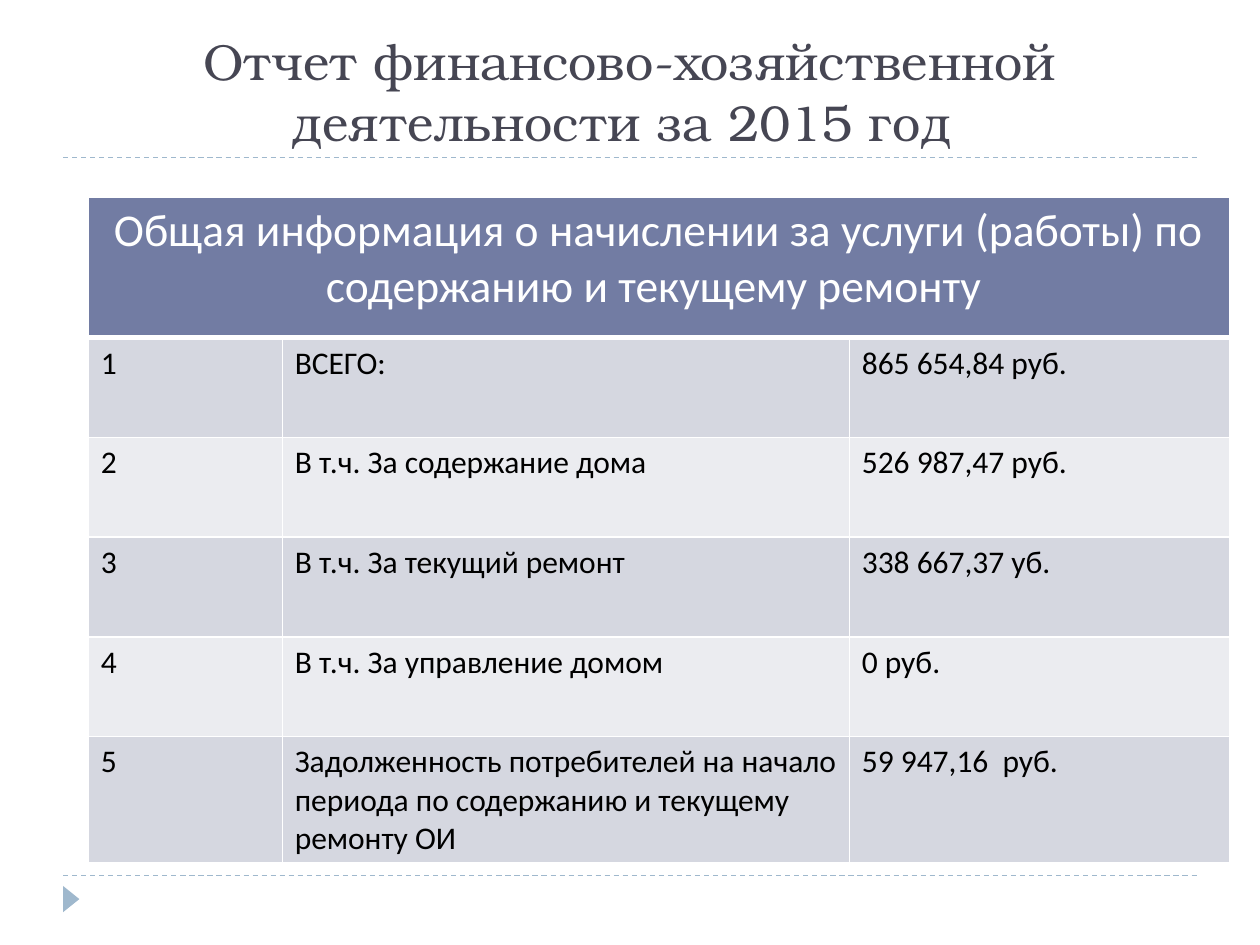
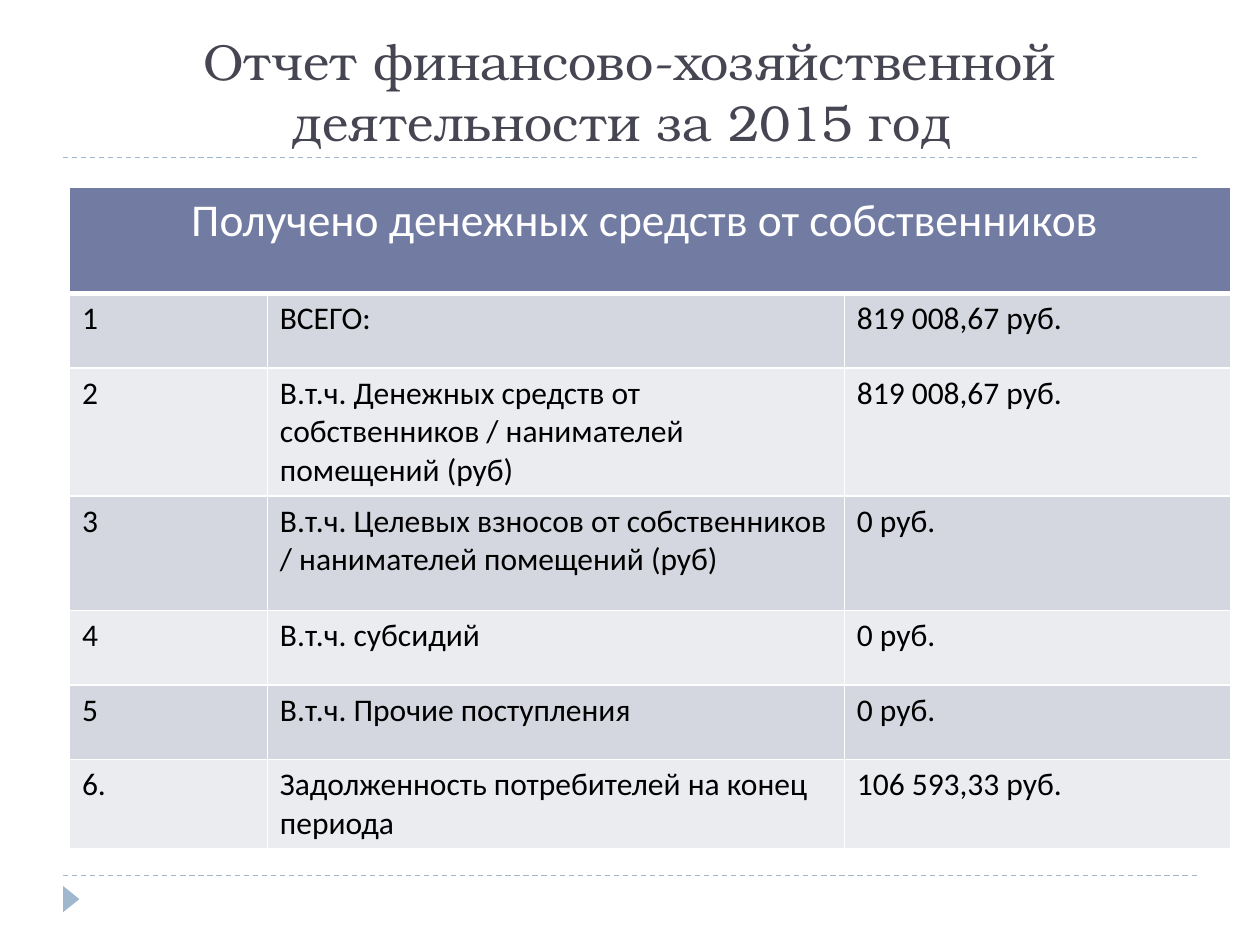
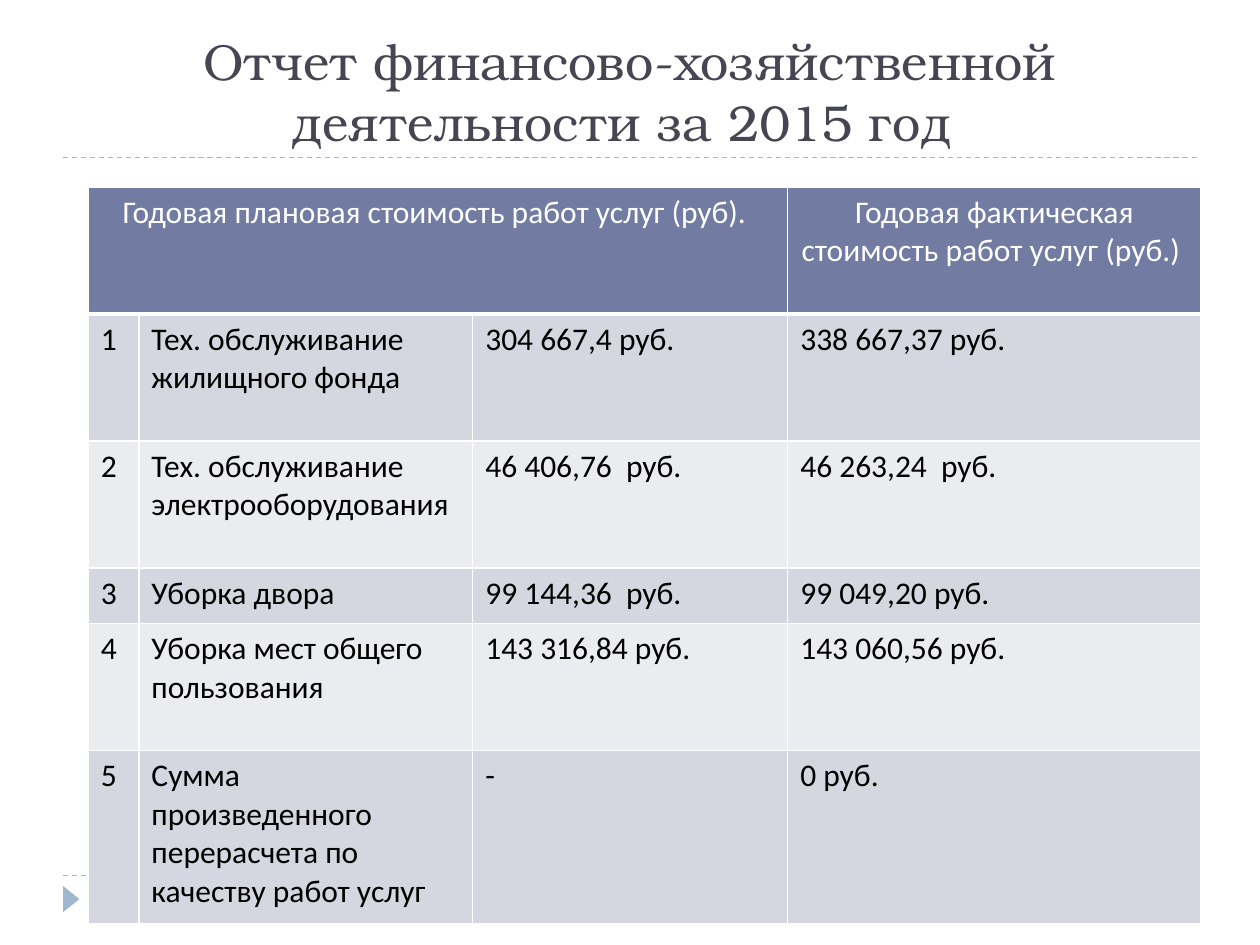
from lxml import etree
from pptx import Presentation
from pptx import util as u
from pptx.dml.color import RGBColor
from pptx.enum import dml, shapes, text
from pptx.oxml import ns

SLATE = RGBColor(0x46, 0x46, 0x53)
SKY = RGBColor(0x9F, 0xB8, 0xCD)
INDIGO = RGBColor(0x72, 0x7C, 0xA3)
BAND_DARK = RGBColor(0xD5, 0xD7, 0xE0)
BAND_LIGHT = RGBColor(0xEB, 0xEC, 0xF0)
WHITE = RGBColor(0xFF, 0xFF, 0xFF)
BLACK = RGBColor(0x00, 0x00, 0x00)

TITLE_FONT = "TeX Gyre Bonum"
TABLE_FONT = "Calibri"
TITLE = "Отчет финансово-хозяйственной деятельности за 2015 год "


class Report:
    def __init__(self):
        self.presentation = Presentation()
        self.presentation.slide_width = u.Cm(25.4)
        self.presentation.slide_height = u.Cm(19.05)
        self.slide = None

    def add_slide(self):
        layout = self.presentation.slide_layouts[6]
        self.slide = self.presentation.slides.add_slide(layout)
        self.add_rule(17.65)
        self.add_rule(3.18)
        self.add_marker()
        self.add_title(TITLE)

    def add_rule(self, top):
        connector = self.slide.shapes.add_connector(
            shapes.MSO_CONNECTOR.STRAIGHT,
            u.Cm(1.27), u.Cm(top), u.Cm(24.13), u.Cm(top))
        connector.line.color.rgb = SKY
        connector.line.width = u.Pt(0.75)
        connector.line.dash_style = dml.MSO_LINE.DASH
        etree.SubElement(connector._element.spPr, ns.qn("a:effectLst"))

    def add_marker(self):
        shape = self.slide.shapes.add_shape(
            shapes.MSO_SHAPE.ISOSCELES_TRIANGLE,
            u.Cm(1.17), u.Cm(17.96), u.Cm(0.53), u.Cm(0.33))
        shape.rotation = 90
        shape.shadow.inherit = False
        shape.fill.solid()
        shape.fill.fore_color.rgb = SKY
        shape.line.fill.background()

    def add_title(self, words):
        shape = self.slide.shapes.add_textbox(
            u.Cm(1.27), u.Cm(0.64), u.Cm(22.86), u.Cm(2.54))
        frame = shape.text_frame
        frame.word_wrap = True
        frame.vertical_anchor = text.MSO_ANCHOR.BOTTOM
        paragraph = frame.paragraphs[0]
        paragraph.alignment = text.PP_ALIGN.CENTER
        self.add_run(paragraph, words, TITLE_FONT, 28.8, SLATE)

    def add_run(self, paragraph, words, font, size, color):
        run = paragraph.add_run()
        run.text = words
        run.font.name = font
        run.font.size = u.Pt(size)
        run.font.color.rgb = color

    def add_table(self, left, top, widths, heights, headers, header_size, rows):
        table = self.slide.shapes.add_table(
            len(heights), len(widths), u.Cm(left), u.Cm(top),
            u.Cm(sum(widths)), u.Cm(sum(heights))).table
        table.first_row = False
        table.horz_banding = False
        for column, width in zip(table.columns, widths):
            column.width = u.Cm(width)
        for row, height in zip(table.rows, heights):
            row.height = u.Cm(height)

        for cell in table.rows[0].cells:
            self.style_cell(cell, INDIGO, bottom=3)
        start = 0
        for words, span in headers:
            cell = table.cell(0, start)
            if span > 1:
                cell.merge(table.cell(0, start + span - 1))
            paragraph = cell.text_frame.paragraphs[0]
            paragraph.alignment = text.PP_ALIGN.CENTER
            self.add_run(paragraph, words, TABLE_FONT, header_size, WHITE)
            start += span

        for number, values in enumerate(rows, 1):
            band = BAND_DARK if number % 2 else BAND_LIGHT
            for cell, words in zip(table.rows[number].cells, values):
                self.style_cell(cell, band)
                paragraph = cell.text_frame.paragraphs[0]
                self.add_run(paragraph, words, TABLE_FONT, 18, BLACK)

    def style_cell(self, cell, color, bottom=1):
        properties = cell._tc.get_or_add_tcPr()
        for side, points in zip("LRTB", (1, 1, 1, bottom)):
            line = etree.SubElement(
                properties, ns.qn(f"a:ln{side}"), w=str(u.Pt(points)))
            fill = etree.SubElement(line, ns.qn("a:solidFill"))
            etree.SubElement(fill, ns.qn("a:srgbClr"), val=str(WHITE))
        cell.fill.solid()
        cell.fill.fore_color.rgb = color


def main():
    report = Report()

    report.add_slide()
    report.add_table(
        1.78, 3.97, [3.91, 11.43, 7.67], [2.84] + [2.01] * 4 + [2.54],
        [("Общая информация о начислении за услуги (работы) по "
          "содержанию и текущему ремонту ", 3)], 26,
        [("1", "ВСЕГО:", "865 654,84 руб."),
         ("2", "В т.ч. За содержание дома", "526 987,47 руб."),
         ("3", "В т.ч. За текущий ремонт", "338 667,37 уб."),
         ("4", "В т.ч. За управление домом", "0 руб."),
         ("5", "Задолженность потребителей на начало периода по "
               "содержанию и текущему ремонту ОИ", "59 947,16  руб.")])

    report.add_slide()
    report.add_table(
        1.4, 3.77, [3.99, 11.63, 7.8], [2.15, 1.5, 2.58, 2.31, 1.5, 1.5, 1.8],
        [("Получено денежных средств от собственников ", 3)], 26,
        [("1", "ВСЕГО:", "819 008,67 руб."),
         ("2", "В.т.ч. Денежных средств от собственников / нанимателей "
               "помещений (руб)", "819 008,67 руб."),
         ("3", "В.т.ч. Целевых взносов от собственников / нанимателей "
               "помещений (руб)", "0 руб."),
         ("4", "В.т.ч. субсидий", "0 руб."),
         ("5", "В.т.ч. Прочие поступления", "0 руб."),
         ("6.", "Задолженность потребителей на конец периода",
          "106 593,33 руб.")])

    report.add_slide()
    report.add_table(
        1.78, 3.77, [1.02, 6.73, 6.35, 8.33],
        [2.56, 2.56, 2.56, 1.12, 2.56, 3.5],
        [("Годовая плановая стоимость работ услуг (руб). ", 3),
         ("Годовая фактическая стоимость работ услуг (руб.) ", 1)], 18,
        [("1", "Тех. обслуживание жилищного фонда",
          "304 667,4 руб.", "338 667,37 руб."),
         ("2", "Тех. обслуживание электрооборудования",
          "46 406,76  руб.", "46 263,24  руб."),
         ("3", "Уборка двора", "99 144,36  руб.", "99 049,20 руб."),
         ("4", "Уборка мест общего пользования",
          "143 316,84 руб.", "143 060,56 руб."),
         ("5", "Сумма произведенного перерасчета по качеству работ услуг",
          "-", "0 руб.")])

    report.presentation.save("out.pptx")


if __name__ == "__main__":
    main()
